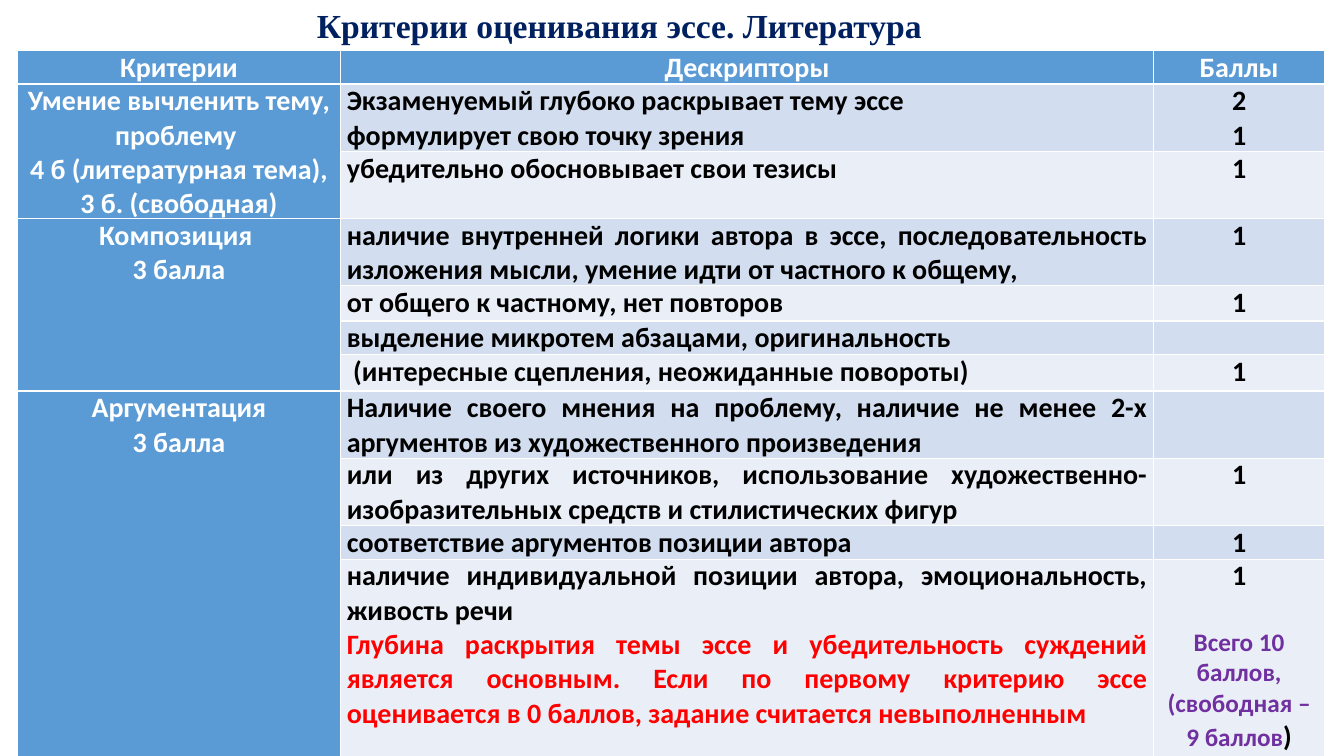
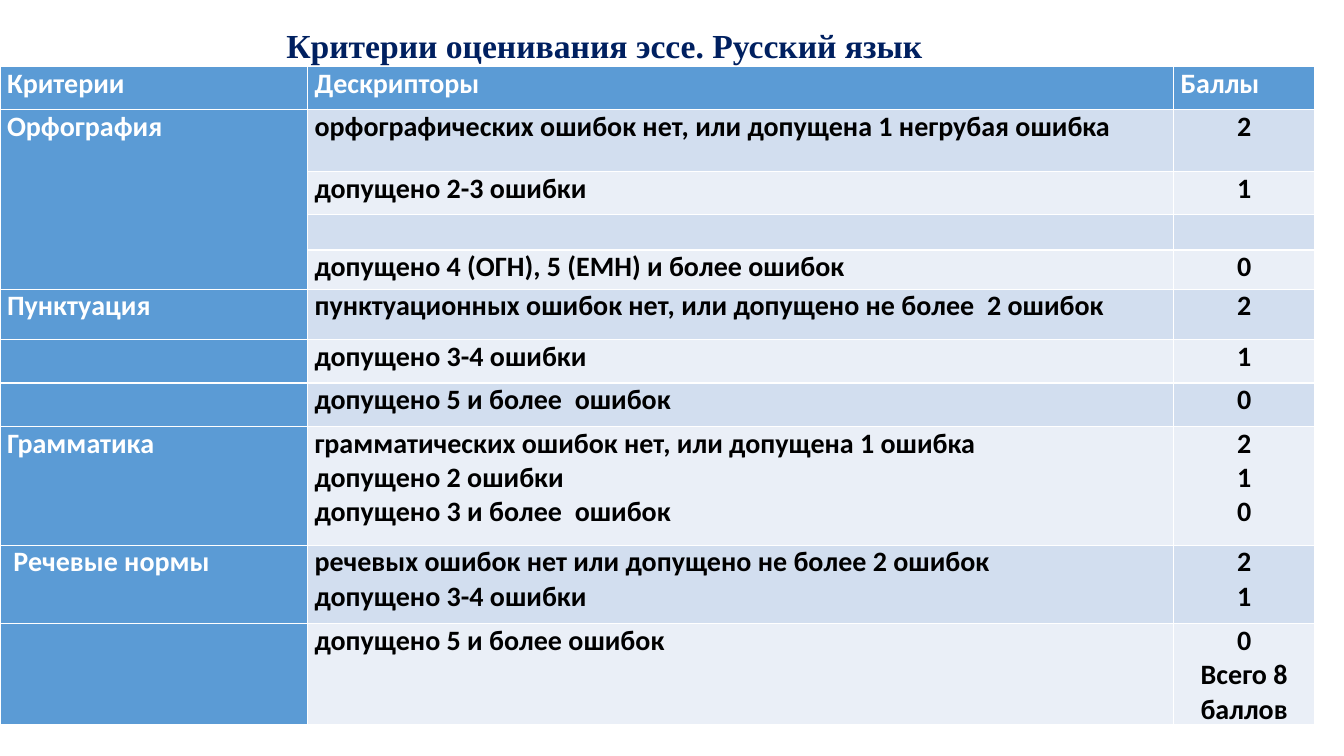
"""Builds two slides with essay marking criteria for literature and Russian."""
from pptx import Presentation
from pptx.dml.color import RGBColor
from pptx.enum.text import MSO_ANCHOR, PP_ALIGN
from pptx.util import Inches, Pt

CENTER, JUSTIFY = PP_ALIGN.CENTER, PP_ALIGN.JUSTIFY
TOP = MSO_ANCHOR.TOP

NAVY, BLUE, WHITE, BLACK = "002060", "5B9BD5", "FFFFFF", "000000"
RED, PURPLE = "FF0000", "7030A0"
BANDS = ["EAEFF7", "D2DEEF"]
HEADINGS = ("Критерии", "Дескрипторы", "Баллы")

literature = {
    "title": "Критерии оценивания эссе. Литература ",
    "title_box": (3.01, 0, 6.35, 0.5),
    "table_box": (0.17, 0.5, 12.96, 7.23),
    "widths": [3.21, 8.06, 1.7],
    "heights": [0.32, 0.65, 0.32, 0.65, 0.35, 0.32, 0.36, 0.62, 0.62, 0.33, 2.18],
    "inset": 0.06,
    "heading_align": CENTER,
    "criteria_align": CENTER,
    "merges": [(1, 2), (3, 6), (7, 10)],
    "rows": [
        ("Умение вычленить тему, проблему \n4 б (литературная тема), 3 б. (свободная)",
         "Экзаменуемый глубоко раскрывает тему эссе\nформулирует свою точку зрения", "2\n1"),
        ("", "убедительно обосновывает свои тезисы", "1"),
        ("Композиция \n3 балла",
         "наличие внутренней логики автора в эссе, последовательность изложения мысли, "
         "умение идти от частного к общему,", "1"),
        ("", "от общего к частному, нет повторов", "1"),
        ("", "выделение микротем абзацами, оригинальность", ""),
        ("", " (интересные сцепления, неожиданные повороты)", "1"),
        ("Аргументация\n3 балла",
         "Наличие своего мнения на проблему, наличие не менее 2-х аргументов "
         "из художественного произведения", ""),
        ("", "или из других источников, использование художественно-изобразительных "
             "средств и стилистических фигур", "1"),
        ("", "соответствие аргументов позиции автора", "1"),
        ("", "наличие индивидуальной позиции автора, эмоциональность, живость речи", "1"),
    ],
}

russian = {
    "title": "Критерии оценивания эссе. Русский язык",
    "title_box": (2.21, 0.2, 7.57, 0.5),
    "table_box": (0, 0.66, 13.04, 6.55),
    "widths": [3.05, 8.59, 1.4],
    "heights": [0.43, 0.61, 0.43, 0.35, 0.39, 0.5, 0.43, 0.43, 1.18, 0.78, 0.43],
    "inset": 0.07,
    "heading_align": JUSTIFY,
    "criteria_align": JUSTIFY,
    "merges": [(1, 4)],
    "rows": [
        ("Орфография", "орфографических ошибок нет, или допущена 1 негрубая ошибка", "2"),
        ("", "допущено 2-3 ошибки", "1"),
        ("", "", ""),
        ("", "допущено 4 (ОГН), 5 (ЕМН) и более ошибок", "0"),
        ("Пунктуация", "пунктуационных ошибок нет, или допущено не более  2 ошибок", "2"),
        ("", "допущено 3-4 ошибки", "1"),
        ("", "допущено 5 и более  ошибок", "0"),
        ("Грамматика",
         "грамматических ошибок нет, или допущена 1 ошибка\n"
         "допущено 2 ошибки\nдопущено 3 и более  ошибок", "2\n1\n0"),
        (" Речевые нормы",
         "речевых ошибок нет или допущено не более 2 ошибок\nдопущено 3-4 ошибки", "2\n1"),
        ("", "допущено 5 и более ошибок", "0\nВсего 8 баллов"),
    ],
}


def add_run(paragraph, text, color, size=20, font="Calibri"):
    """Append a bold run to the paragraph."""
    run = paragraph.add_run()
    run.text = text
    run.font.name = font
    run.font.size = Pt(size)
    run.font.bold = True
    run.font.color.rgb = RGBColor.from_string(color)


prs = Presentation()
prs.slide_width, prs.slide_height = Inches(13.33), Inches(7.5)

tables = []
for subject in (literature, russian):
    slide = prs.slides.add_slide(prs.slide_layouts[6])
    title = slide.shapes.add_textbox(*map(Inches, subject["title_box"])).text_frame
    title.word_wrap = True
    title.paragraphs[0].alignment = CENTER
    add_run(title.paragraphs[0], subject["title"], NAVY, 24, "Times New Roman")

    rows = [HEADINGS] + subject["rows"]
    criteria = slide.shapes.add_table(
        len(rows), len(HEADINGS), *map(Inches, subject["table_box"])).table
    tables.append(criteria)
    for column, width in zip(criteria.columns, subject["widths"]):
        column.width = Inches(width)
    for row, height in zip(criteria.rows, subject["heights"]):
        row.height = Inches(height)

    for r, texts in enumerate(rows):
        for c, text in enumerate(texts):
            cell = criteria.cell(r, c)
            cell.margin_left = cell.margin_right = Inches(subject["inset"])
            cell.margin_top = cell.margin_bottom = 0
            cell.vertical_anchor = TOP
            on_blue = r == 0 or c == 0
            cell.fill.solid()
            cell.fill.fore_color.rgb = RGBColor.from_string(BLUE if on_blue else BANDS[r % 2])
            if not text:
                continue
            body_align = (subject["criteria_align"], JUSTIFY, CENTER)[c]
            for i, line in enumerate(text.split("\n")):
                frame = cell.text_frame
                paragraph = frame.add_paragraph() if i else frame.paragraphs[0]
                paragraph.alignment = body_align if r else subject["heading_align"]
                add_run(paragraph, line, WHITE if on_blue else BLACK)

    for first, last in subject["merges"]:
        criteria.cell(first, 0).merge(criteria.cell(last, 0))

warning = tables[0].cell(10, 1).text_frame.add_paragraph()
warning.alignment = JUSTIFY
add_run(warning, "Глубина раскрытия темы эссе и убедительность суждений является основным. "
                 "Если по первому критерию эссе оценивается в 0 баллов, "
                 "задание считается невыполненным", RED)

total = tables[0].cell(10, 2).text_frame.add_paragraph()
total.alignment = CENTER
total.space_before = Pt(24)
add_run(total, "Всего 10 баллов, (свободная – 9 баллов", PURPLE, 18)
add_run(total, ")", BLACK)

prs.save("out.pptx")
